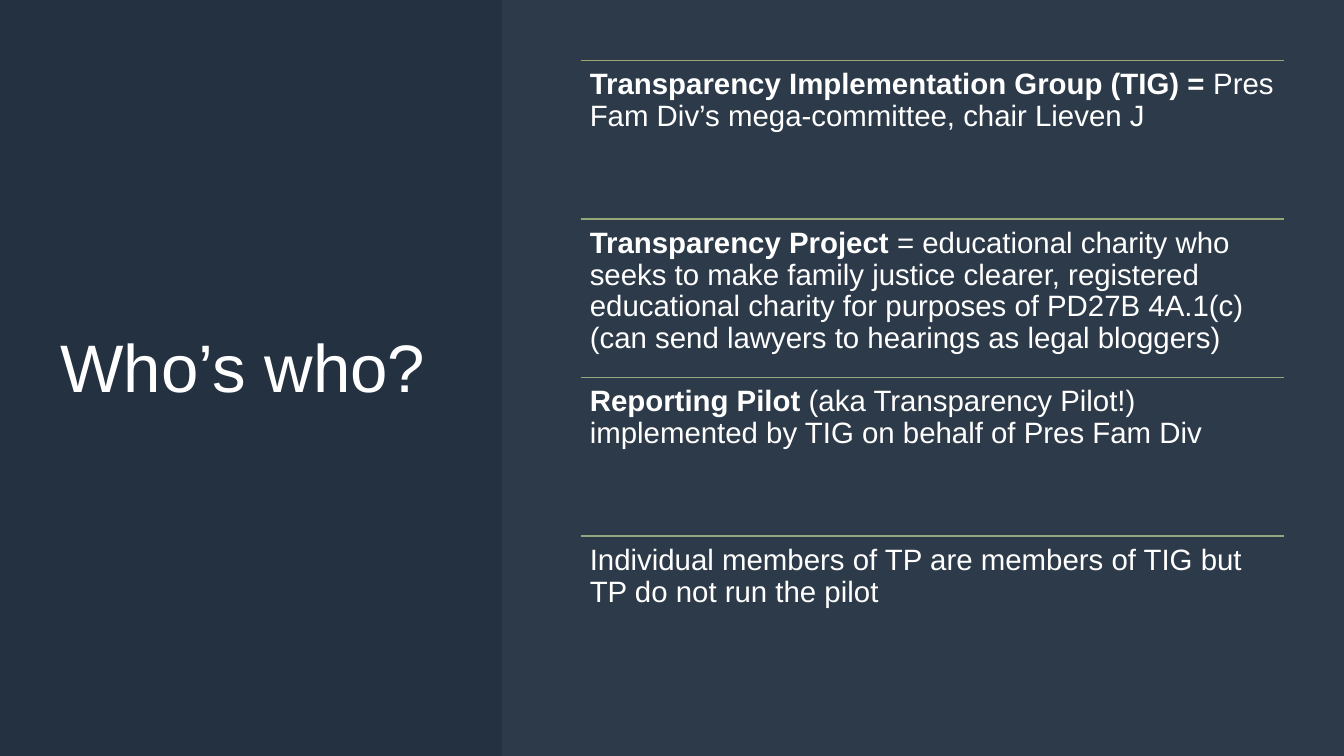
from lxml import etree
from pptx import Presentation
from pptx.dml.color import RGBColor
from pptx.enum.shapes import MSO_CONNECTOR, MSO_SHAPE
from pptx.enum.text import MSO_ANCHOR
from pptx.oxml.ns import qn
from pptx.util import Inches, Pt

RECTANGLE = MSO_SHAPE.RECTANGLE
STRAIGHT = MSO_CONNECTOR.STRAIGHT
TOP, MIDDLE = MSO_ANCHOR.TOP, MSO_ANCHOR.MIDDLE

NAVY = RGBColor(0x24, 0x31, 0x41)
MIST = RGBColor(0xE5, 0xEA, 0xF0)
WHITE = RGBColor(0xFF, 0xFF, 0xFF)
FONT = "Arial"

SLIDE_WIDTH, SLIDE_HEIGHT = 13.33, 7.5
PANEL_LEFT = 4.98
LIST_LEFT, LIST_TOP, LIST_WIDTH, LIST_HEIGHT = 5.76, 0.6, 6.97, 6.29

ENTRIES = [
    (RGBColor(0x9C, 0xA6, 0x71), "Transparency Implementation Group (TIG) =",
     " Pres Fam Div’s mega-committee, chair Lieven J"),
    (RGBColor(0x96, 0xA7, 0x76), "Transparency Project ",
     "= educational charity who seeks to make family justice clearer, "
     "registered educational charity for purposes of PD27B 4A.1(c) "
     "(can send lawyers to hearings as legal bloggers)"),
    (RGBColor(0x92, 0xA7, 0x7B), "Reporting Pilot ",
     "(aka Transparency Pilot!) implemented by TIG on behalf of Pres Fam Div"),
    (RGBColor(0x8F, 0xA8, 0x80), "",
     "Individual members of TP are members of TIG but TP do not run the pilot"),
]


def add_panel(page, left, width, color, opacity=100):
    """Draw a full-height panel, optionally see-through."""
    panel = page.shapes.add_shape(
        RECTANGLE, Inches(left), 0, Inches(width), Inches(SLIDE_HEIGHT))
    panel.shadow.inherit = False
    panel.line.fill.background()
    panel.fill.solid()
    panel.fill.fore_color.rgb = color
    if opacity < 100:
        tint = panel.fill._xPr.find(qn("a:solidFill"))[0]
        etree.SubElement(tint, qn("a:alpha"), val=str(opacity * 1000))


def add_rule(page, left, top, width, color):
    """Draw a thin horizontal line without a shadow."""
    rule = page.shapes.add_connector(
        STRAIGHT, Inches(left), Inches(top), Inches(left + width), Inches(top))
    rule.line.color.rgb = color
    rule.line.width = Pt(1)
    etree.SubElement(rule._element.spPr, qn("a:effectLst"))


def add_span(para, text, size, bold=False):
    """Append a white run of text to a paragraph."""
    span = para.add_run()
    span.text = text
    span.font.name = FONT
    span.font.size = Pt(size)
    span.font.bold = bold
    span.font.color.rgb = WHITE


def add_text(page, text, left, top, width, height, size, lead="",
             anchor=TOP, inset=0.0, line_spacing=1.0, space_after=0.0):
    """Place a wrapped text box with an optional bold lead."""
    box = page.shapes.add_textbox(
        Inches(left), Inches(top), Inches(width), Inches(height))
    frame = box.text_frame
    frame.word_wrap = True
    frame.vertical_anchor = anchor
    frame.margin_left = frame.margin_right = Inches(inset)
    frame.margin_top = frame.margin_bottom = Inches(inset)
    para = frame.paragraphs[0]
    para.line_spacing = line_spacing
    para.space_after = Pt(space_after)
    if lead:
        add_span(para, lead, size, bold=True)
    add_span(para, text, size)


def main():
    """Build the slide and save the deck."""
    deck = Presentation()
    deck.slide_width = Inches(SLIDE_WIDTH)
    deck.slide_height = Inches(SLIDE_HEIGHT)
    page = deck.slides.add_slide(deck.slide_layouts[6])
    page.background.fill.solid()
    page.background.fill.fore_color.rgb = NAVY

    add_panel(page, 0, SLIDE_WIDTH, NAVY)
    add_text(page, "Who’s who?", 0.6, 0.6, 3.9, 6.06, 48, anchor=MIDDLE)
    add_panel(page, PANEL_LEFT, SLIDE_WIDTH - PANEL_LEFT, MIST, opacity=5)

    row_height = LIST_HEIGHT / len(ENTRIES)
    for index, (color, lead, text) in enumerate(ENTRIES):
        top = LIST_TOP + index * row_height
        add_rule(page, LIST_LEFT, top, LIST_WIDTH, color)
        add_text(page, text, LIST_LEFT, top, LIST_WIDTH, row_height, 21,
                 lead=lead, inset=0.09, line_spacing=0.9, space_after=7.35)

    deck.save("out.pptx")


if __name__ == "__main__":
    main()
